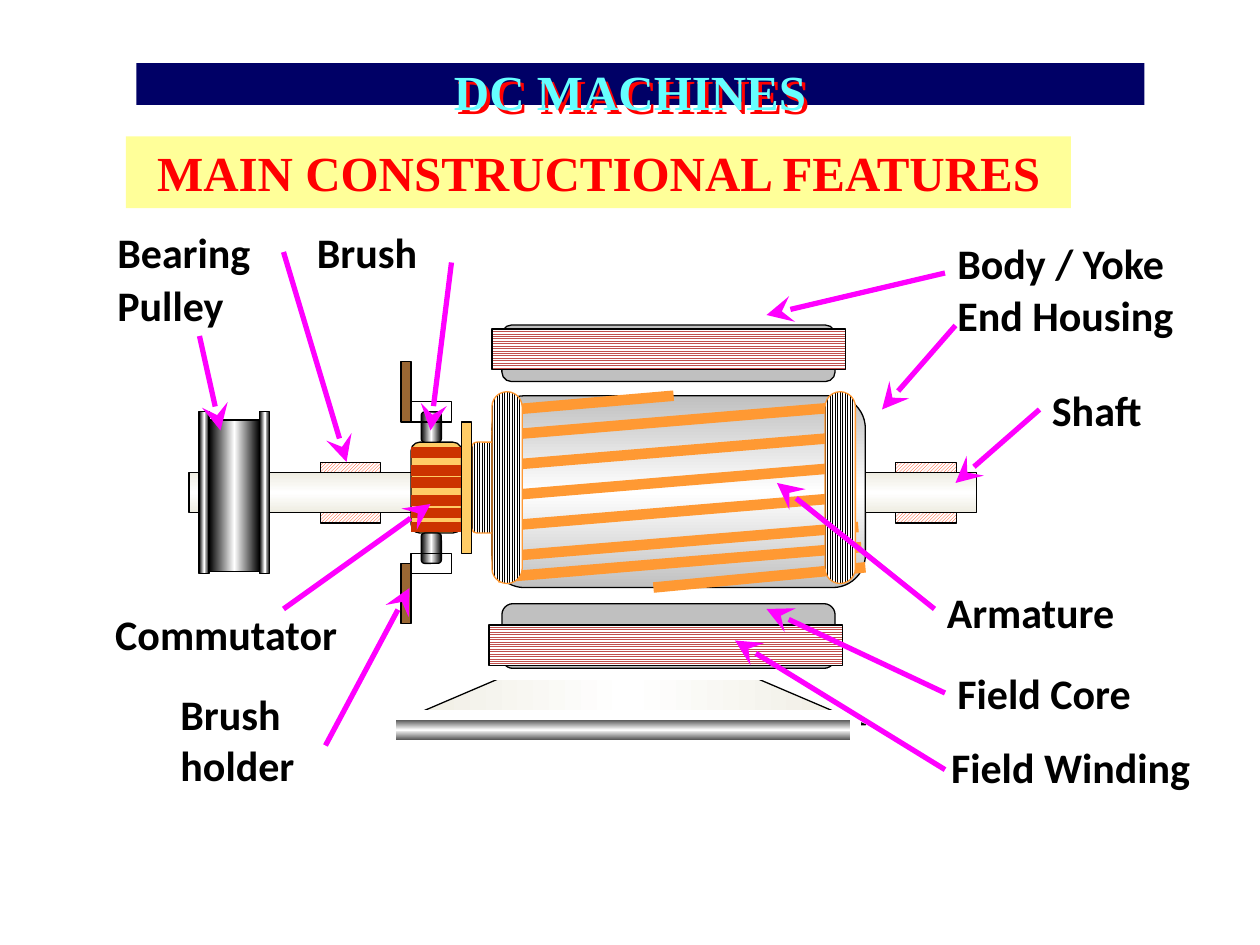
from copy import deepcopy
from dataclasses import dataclass

from lxml import etree
from pptx import Presentation
from pptx.dml.color import RGBColor
from pptx.enum.dml import MSO_PATTERN as Pattern
from pptx.enum.shapes import MSO_CONNECTOR as Conn, MSO_SHAPE as Shape
from pptx.enum.text import MSO_ANCHOR as Anchor, PP_ALIGN as Align
from pptx.oxml.ns import qn
from pptx.util import Inches, Pt


@dataclass(frozen=True)
class Theme:
    navy: str = "000066"
    cyan: str = "66FFFF"
    cream: str = "FFFF99"
    red: str = "FF0000"
    black: str = "000000"
    white: str = "FFFFFF"
    ivory: str = "EEECE1"
    silver: str = "C0C0C0"
    copper: str = "FF9933"
    brass: str = "FFCC66"
    segment: str = "CC3300"
    bearing: str = "FF3300"
    coil: str = "C0504D"
    brown: str = "996633"
    pointer: str = "FF00FF"
    head_font: str = "Times New Roman"
    label_font: str = "Calibri"
    head_size: int = 28
    label_size: int = 24
    thin: float = 0.75
    thick: float = 6


T = Theme()
WIDTH, HEIGHT = Inches(10), Inches(7.5)
STEP = 6.25 / 78          # machine grid: the shaft spans 78 columns
LEFT, AXIS = 1.5, 3.91    # shaft's left end and centre line, inches


def page(col, row):
    """Point on the slide's grid of 120 columns by 90 rows."""
    return int(WIDTH * col / 120), int(HEIGHT * row / 90)


def cell(col, row):
    """Point on the machine grid; rows count from the shaft's axis."""
    return Inches(LEFT + col * STEP), Inches(AXIS + row * STEP)


def rgb(color):
    return RGBColor.from_string(color)


# Fills: each returns a function that paints a shape
def solid(color):
    def paint(sp):
        sp.fill.solid()
        sp.fill.fore_color.rgb = rgb(color)
    return paint


def sheen(edge, angle):
    def paint(sp):
        sp.fill.gradient()
        sp.fill.gradient_angle = angle
        stops = sp._element.spPr.find(".//" + qn("a:gsLst"))
        stops.insert(1, deepcopy(stops[0]))
        for stop, (pos, color) in zip(sp.fill.gradient_stops,
                                      ((0, edge), (0.5, T.white), (1, edge))):
            stop.position = pos
            stop.color.rgb = rgb(color)
    return paint


def hatch(pattern, color):
    def paint(sp):
        sp.fill.patterned()
        sp.fill.pattern = pattern
        sp.fill.fore_color.rgb = rgb(color)
        sp.fill.back_color.rgb = rgb(T.white)
    return paint


# Elements
def style(sp, paint, line=T.black, width=T.thin):
    sp.shadow.inherit = False
    if paint:
        paint(sp)
    else:
        sp.fill.background()
    if line:
        sp.line.color.rgb = rgb(line)
        sp.line.width = Pt(width)
    else:
        sp.line.fill.background()
    return sp


def add_box(shapes, grid, col, row, cols, rows, paint, kind=Shape.RECTANGLE,
            adj=None, **outline):
    (x, y), (x2, y2) = grid(col, row), grid(col + cols, row + rows)
    sp = shapes.add_shape(kind, x, y, x2 - x, y2 - y)
    if adj is not None:
        sp.adjustments[0] = adj
    return style(sp, paint, **outline)


def add_part(shapes, *box, **look):
    return add_box(shapes, cell, *box, **look)


def add_round(shapes, *box, adj=0.17, **look):
    return add_part(shapes, *box, kind=Shape.ROUNDED_RECTANGLE, adj=adj, **look)


def add_line(shapes, grid, start, end, color, width):
    c = shapes.add_connector(Conn.STRAIGHT, *grid(*start), *grid(*end))
    c.line.color.rgb = rgb(color)
    c.line.width = Pt(width)
    etree.SubElement(c._element.spPr, qn("a:effectLst"))
    return c


def add_arrow(shapes, start, end):
    c = add_line(shapes, page, start, end, T.pointer, 3)
    etree.SubElement(c.line._get_or_add_ln(), qn("a:tailEnd"),
                     type="stealth", w="lg", len="lg")


def write(tf, lines, font, size, color, align=Align.LEFT, wrap=True):
    tf.word_wrap = wrap
    for i, line in enumerate(lines):
        p = tf.add_paragraph() if i else tf.paragraphs[0]
        p.alignment = align
        r = p.add_run()
        r.text = line
        r.font.name, r.font.size, r.font.bold = font, Pt(size), True
        r.font.color.rgb = rgb(color)


def add_label(shapes, col, row, cols, *lines, wrap=True):
    tb = shapes.add_textbox(*page(col, row), *page(cols, 6 * len(lines)))
    write(tb.text_frame, lines, T.label_font, T.label_size, T.black, wrap=wrap)


def add_headings(shapes):
    add_box(shapes, page, 13, 6, 96, 4, solid(T.navy), line=None)
    title = shapes.title
    shapes._spTree.append(title._element)   # in front of the bar
    title.left, title.top = page(42, 5.3)
    title.width, title.height = page(36, 6.8)
    title.text_frame.vertical_anchor = Anchor.TOP
    write(title.text_frame, ["DC MACHINES"], T.head_font, T.head_size, T.cyan,
          Align.CENTER, wrap=False)
    effects = etree.SubElement(title._element.spPr, qn("a:effectLst"))
    shadow = etree.SubElement(effects, qn("a:outerShdw"), dist="36000",
                              dir="2700000", algn="ctr", rotWithShape="0")
    etree.SubElement(shadow, qn("a:srgbClr"), val=T.red)

    banner = add_box(shapes, page, 12, 13, 90, 6.84, solid(T.cream), line=None)
    banner.text_frame.vertical_anchor = Anchor.MIDDLE
    write(banner.text_frame, ["MAIN CONSTRUCTIONAL FEATURES"], T.head_font,
          T.head_size, T.red, Align.CENTER)


def add_base(shapes):
    corners = [cell(*pt) for pt in ((20, 23), (31.7, 18), (55.3, 18), (67, 23))]
    fb = shapes.build_freeform(*corners[0])
    fb.add_line_segments(corners[1:], close=True)
    style(fb.convert_to_shape(), sheen(T.ivory, 0))
    add_part(shapes, 20, 22, 46, 3, sheen(T.black, 90),
             line=T.white, width=T.thick)
    add_line(shapes, cell, (27, 18), (61, 18), T.white, T.thick)


def add_rotor(shapes):
    ribs = hatch(Pattern.NARROW_VERTICAL, T.black)
    for col in (13, 70):                                  # bearings
        add_part(shapes, col, -3, 6, 6, hatch(Pattern.DARK_UPWARD_DIAGONAL, T.bearing))
    add_round(shapes, 30, -9.6, 37, 19, paint=sheen(T.silver, 90))
    # Armature conductors
    bars = [((30 + dx, row), (66 + dx, row - 3)) for dx, row in
            ((0, -5.6), (0, -2.6), (0, 0.4), (0, 3.4), (0.3, 6.4), (0.6, 8.4))]
    bars += [((46, 9.4), (67, 7.4)), ((31.7, -8.2), (48, -9.6))]
    for start, end in bars:
        add_line(shapes, cell, start, end, T.copper, T.thick)
    for col, cols in ((0, 30), (67, 11)):                 # shaft ends
        add_part(shapes, col, -2, cols, 4, sheen(T.ivory, 90))
    # Commutator and its segments
    add_round(shapes, 22, -5, 5, 9, paint=solid(T.brass))
    for row in (-4, -2.2, -1, 0.8, 2, 3.4):
        add_line(shapes, cell, (22, row), (27, row), T.segment, T.thick)
    add_round(shapes, 28, -5, 3, 9, paint=ribs, line=T.copper)
    for col in (30, 63):                                  # end windings
        add_round(shapes, col, -10, 3, 19, paint=ribs, line=T.copper, adj=0.5)
    add_part(shapes, 27, -7, 1, 13, solid(T.brass))


def add_stator(shapes):
    for brush, holder, clip in ((4, 7, 6), (-8, -13, -9)):
        add_round(shapes, 23, brush, 2, 3, paint=sheen(T.black, 0))
        add_part(shapes, 21, holder, 1, 6, solid(T.brown))
        add_part(shapes, 22, clip, 4, 2, None)
    for row, rows in ((-16.6, 5.6), (11, 6.4)):           # field cores
        add_round(shapes, 31, row, 33, rows, paint=solid(T.silver))
    for col, row in ((29.7, 13.1), (30, -16.2)):          # field windings
        add_part(shapes, col, row, 35, 4, hatch(Pattern.NARROW_HORIZONTAL, T.coil))


def add_pulley(shapes):
    for col, row, cols, rows in ((2, -7.2, 5, 15), (7, -8, 1, 16), (1, -8, 1, 16)):
        add_part(shapes, col, row, cols, rows, sheen(T.black, 0))


def add_callouts(shapes):
    for label in ((10, 21, 19, "Bearing"), (10, 26, 15, "Pulley"),
                  (29, 21, 14, "Brush"), (16, 65, 16, "Brush", "holder"),
                  (90, 63, 29, "Field Core")):
        add_label(shapes, *label)
    for label in ((90, 22, 22.3, "Body / Yoke"), (90, 27, 23.2, "End Housing"),
                  (99, 36, 11.2, "Shaft"), (89, 55.3, 18.5, "Armature"),
                  (89.4, 70, 25.4, "Field Winding"), (9.8, 57.4, 23.8, "Commutator")):
        add_label(shapes, *label, wrap=False)
    for start, end in (((27, 58), (41, 48)), ((43, 25), (41, 41)),
                       ((31, 71), (39, 56)), ((19, 32), (21, 41)),
                       ((90, 73.3), (70, 61)), ((89, 58), (74, 46)),
                       ((99, 39), (91, 46)), ((90, 26), (73, 30)),
                       ((90, 66), (73, 58)), ((27, 24), (33, 44)),
                       ((91, 31), (84, 39))):
        add_arrow(shapes, start, end)


def main():
    prs = Presentation()
    prs.slide_width, prs.slide_height = WIDTH, HEIGHT
    shapes = prs.slides.add_slide(prs.slide_layouts[5]).shapes
    for draw in (add_headings, add_base, add_rotor, add_stator, add_pulley,
                 add_callouts):
        draw(shapes)
    prs.save("out.pptx")


if __name__ == "__main__":
    main()
